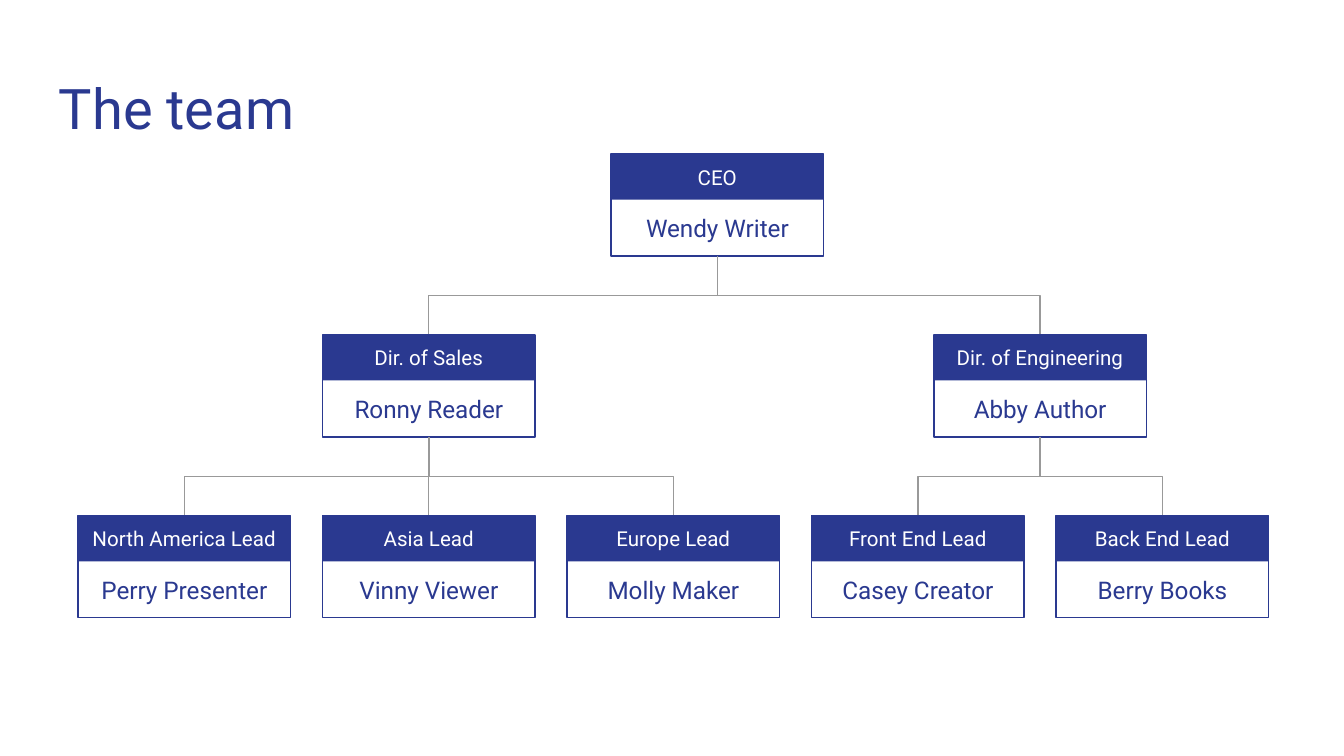
from pptx import Presentation
from pptx.dml.color import RGBColor
from pptx.enum.shapes import MSO_CONNECTOR, MSO_SHAPE
from pptx.enum.text import MSO_ANCHOR, PP_ALIGN
from pptx.oxml.ns import qn
from pptx.util import Pt

RECT = MSO_SHAPE.RECTANGLE
STRAIGHT, ELBOW = MSO_CONNECTOR.STRAIGHT, MSO_CONNECTOR.ELBOW
LEFT, CENTER = PP_ALIGN.LEFT, PP_ALIGN.CENTER
TOP, MIDDLE = MSO_ANCHOR.TOP, MSO_ANCHOR.MIDDLE

COLORS = {"navy": "2A3990", "white": "FFFFFF", "gray": "999999"}
FONT = "Roboto"
BOX_W, BOX_H, HEADER_H, TEXT_H = 113.8, 54.7, 24.5, 15
X0, COL_STEP = 41.8, 131
Y0, LEVEL_STEP = 82.5, 96.9

TEAM = ("CEO", "Wendy Writer", 2.18, [
    ("Dir. of Sales", "Ronny Reader", 1, [
        ("North America Lead", "Perry Presenter", 0, []),
        ("Asia Lead", "Vinny Viewer", 1, []),
        ("Europe Lead", "Molly Maker", 2, []),
    ]),
    ("Dir. of Engineering", "Abby Author", 3.5, [
        ("Front End Lead", "Casey Creator", 3, []),
        ("Back End Lead", "Berry Books", 4, []),
    ]),
])


def rgb(name):
    return RGBColor.from_string(COLORS[name])


def add_text(s, text, x, y, w, h, size=13, color="navy", align=CENTER, anchor=MIDDLE):
    tf = s.shapes.add_textbox(Pt(x), Pt(y), Pt(w), Pt(h)).text_frame
    tf.word_wrap = True
    tf.vertical_anchor = anchor
    tf.margin_left = tf.margin_right = tf.margin_top = tf.margin_bottom = Pt(7.2)
    p = tf.paragraphs[0]
    p.alignment = align
    r = p.add_run()
    r.text = text
    r.font.name = FONT
    r.font.size = Pt(size)
    r.font.color.rgb = rgb(color)


def add_rect(s, x, y, w, h, fill=None, line=None):
    sp = s.shapes.add_shape(RECT, Pt(x), Pt(y), Pt(w), Pt(h))
    sp.shadow.inherit = False
    if fill:
        sp.fill.solid()
        sp.fill.fore_color.rgb = rgb(fill)
    else:
        sp.fill.background()
    if line:
        sp.line.color.rgb = rgb(line)
        sp.line.width = Pt(0.75)
    else:
        sp.line.fill.background()


def add_link(s, x1, y1, x2, y2):
    if x1 == x2:
        c = s.shapes.add_connector(STRAIGHT, Pt(x1), Pt(y1), Pt(x2), Pt(y2))
    else:
        side = 1 if x2 > x1 else -1
        cx, cy = (x1 + x2) / 2, (y1 + y2) / 2
        half_w, half_h = side * (y2 - y1) / 2, abs(x2 - x1) / 2
        c = s.shapes.add_connector(ELBOW, Pt(cx + half_w), Pt(cy - half_h),
                                   Pt(cx - half_w), Pt(cy + half_h))
        degrees = 270 if side > 0 else 90
        c._element.spPr.find(qn("a:xfrm")).set("rot", str(degrees * 60000))
    c.line.color.rgb = rgb("gray")
    c.line.width = Pt(0.75)
    spPr = c._element.spPr
    spPr.append(spPr.makeelement(qn("a:effectLst"), {}))


def add_card(s, role, name, x, y):
    add_rect(s, x, y, BOX_W, BOX_H, line="navy")
    add_rect(s, x, y, BOX_W, HEADER_H, fill="navy")
    add_text(s, role, x, y + (HEADER_H - TEXT_H) / 2, BOX_W, TEXT_H, size=11, color="white")
    add_text(s, name, x, y + (HEADER_H + BOX_H - TEXT_H) / 2, BOX_W, TEXT_H)


def add_branch(s, member, level=0):
    role, name, col, reports = member
    x, y = X0 + col * COL_STEP, Y0 + level * LEVEL_STEP
    add_card(s, role, name, x, y)
    for report in reports:
        report_x = X0 + report[2] * COL_STEP
        add_link(s, x + BOX_W / 2, y + BOX_H, report_x + BOX_W / 2, y + LEVEL_STEP)
    for report in reports:
        add_branch(s, report, level + 1)


def main():
    prs = Presentation()
    prs.slide_width, prs.slide_height = Pt(720), Pt(405)
    s = prs.slides.add_slide(prs.slide_layouts[6])
    add_text(s, "The team", 24.5, 32.4, 671, 47.5, size=30, align=LEFT, anchor=TOP)
    add_branch(s, TEAM)
    prs.save("out.pptx")


if __name__ == "__main__":
    main()
